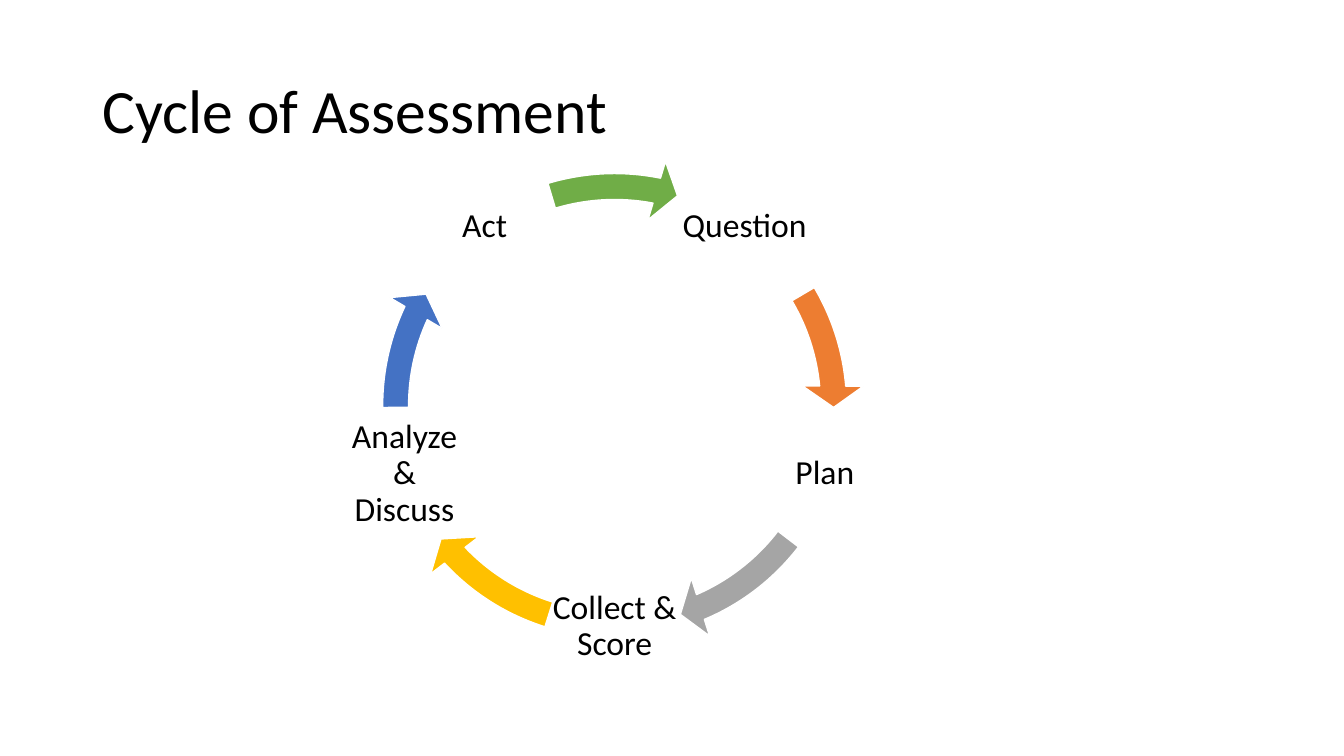
from dataclasses import dataclass
from math import cos, radians, sin

from pptx import Presentation
from pptx.dml.color import RGBColor
from pptx.enum.shapes import MSO_SHAPE as Shape
from pptx.enum.text import MSO_ANCHOR as Anchor, PP_ALIGN as Align
from pptx.util import Cm, Pt

CENTRE_X, CENTRE_Y = 15.49, 10.22
LABEL_RADIUS, LABEL_SIZE = 5.57, 3.35
ARROW_SIZE = 12.57
INSET = 0.08
DEGREE = 0.6  # one degree in adjustment units


@dataclass
class Stage:
    label: str
    colour: str
    start: float  # tail of the arrow, degrees clockwise from the right
    end: float    # base of the arrowhead


STAGES = [
    Stage("Question", "ED7D31", 329.43, 354.9),
    Stage("Plan", "A5A5A5", 37.55, 66.92),
    Stage("Collect & Score", "FFC000", 107.48, 136.86),
    Stage("Analyze & Discuss", "4472C4", 179.51, 204.97),
    Stage("Act", "70AD47", 253.3, 281.1),
]


def rgb(colour: str) -> RGBColor:
    return RGBColor.from_string(colour)


def square(x: float, y: float, size: float) -> tuple:
    """Left, top, width and height of a square centred on x, y."""
    return Cm(x - size / 2), Cm(y - size / 2), Cm(size), Cm(size)


def format_text(tf, size: int, align: Align) -> None:
    tf.word_wrap = True
    tf.vertical_anchor = Anchor.MIDDLE
    p = tf.paragraphs[0]
    p.alignment = align
    p.line_spacing = 0.9
    for r in p.runs:
        r.font.name = "Calibri"
        r.font.size = Pt(size)
        r.font.color.rgb = rgb("000000")


def add_label(s, stage: Stage, angle: float) -> None:
    x = CENTRE_X + LABEL_RADIUS * cos(radians(angle))
    y = CENTRE_Y + LABEL_RADIUS * sin(radians(angle))
    tf = s.shapes.add_textbox(*square(x, y, LABEL_SIZE)).text_frame
    tf.margin_left = tf.margin_right = Cm(INSET)
    tf.margin_top = tf.margin_bottom = Cm(INSET)
    tf.text = stage.label
    format_text(tf, 24, Align.CENTER)


def add_arrow(s, stage: Stage) -> None:
    sp = s.shapes.add_shape(Shape.CIRCULAR_ARROW,
                            *square(CENTRE_X, CENTRE_Y, ARROW_SIZE))
    values = (0.052, 5.6 * DEGREE, stage.end * DEGREE, stage.start * DEGREE, 0.061)
    for i, value in enumerate(values):
        sp.adjustments[i] = value
    sp.shadow.inherit = False
    sp.fill.solid()
    sp.fill.fore_color.rgb = rgb(stage.colour)
    sp.line.color.rgb = rgb("FFFFFF")
    sp.line.width = Pt(1)


def main() -> None:
    prs = Presentation()
    prs.slide_width, prs.slide_height = Cm(33.87), Cm(19.05)
    s = prs.slides.add_slide(prs.slide_layouts[5])

    # Title
    title = s.shapes.title
    title.left, title.top, title.width, title.height = (
        Cm(2.33), Cm(1.01), Cm(29.21), Cm(3.68))
    title.text_frame.text = "Cycle of Assessment"
    format_text(title.text_frame, 44, Align.LEFT)

    # Cycle: evenly spaced labels, each followed by its arrow
    step = 360 / len(STAGES)
    for i, stage in enumerate(STAGES):
        add_label(s, stage, -54 + i * step)
        add_arrow(s, stage)

    prs.save("out.pptx")


if __name__ == "__main__":
    main()
